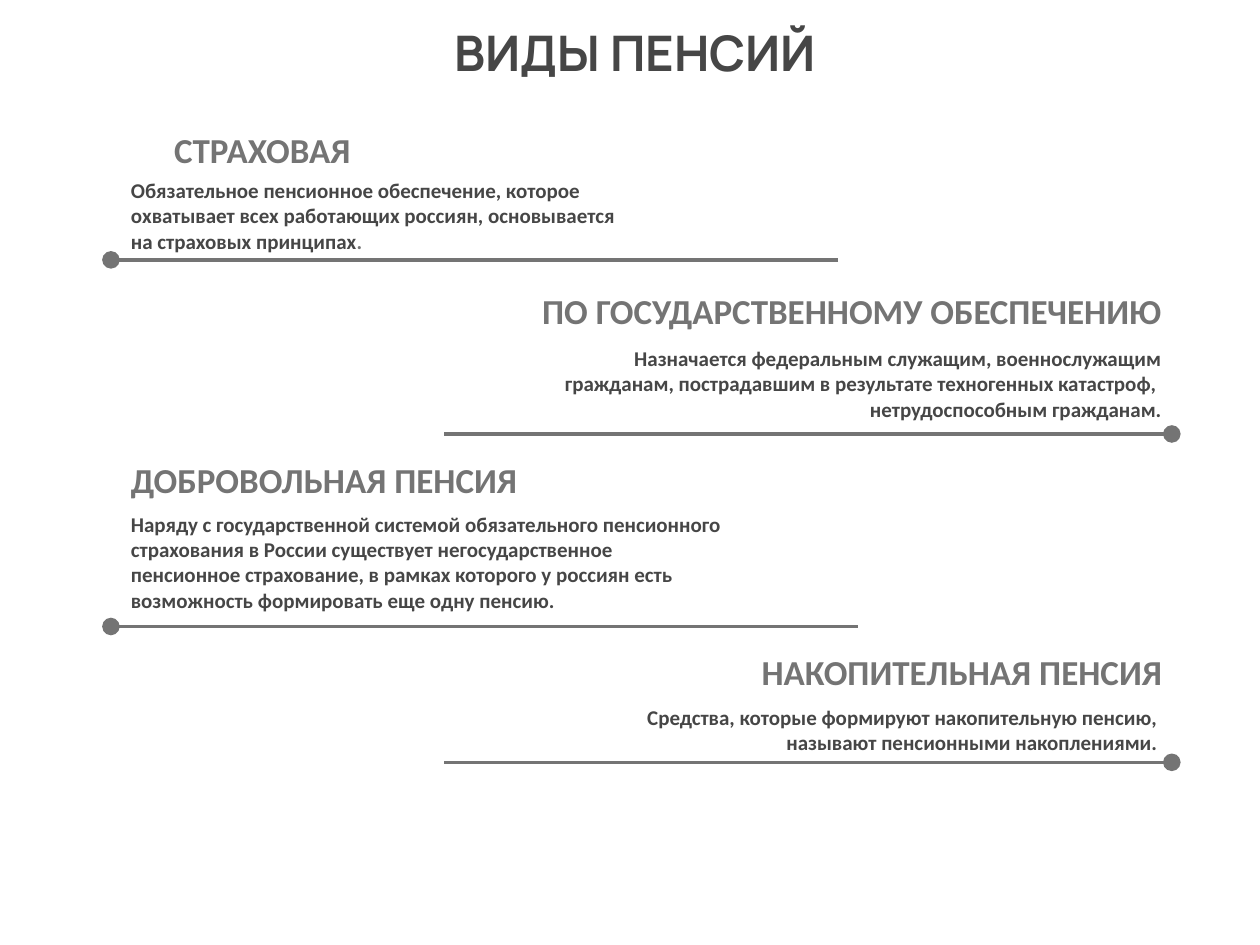
import pptx
import pptx.util
import pptx.dml.color
import pptx.enum.shapes
import pptx.enum.text
import pptx.oxml
import pptx.oxml.ns

Pt = pptx.util.Pt
Align = pptx.enum.text.PP_ALIGN
LEFT, RIGHT = Align.LEFT, Align.RIGHT

# Content: boxes are left, top, width, height; rules run from plain end to dot
TITLE = "ВИДЫ ПЕНСИЙ"
SECTIONS = [
    {"heading": "СТРАХОВАЯ", "heading_align": RIGHT, "align": LEFT,
     "heading_box": (25, 70, 182.4, 31.5), "body_box": (67.7, 98, 372, 51),
     "rule": (479, 63.4, 148.5),
     "body": [["Обязательное пенсионное обеспечение, которое"],
              ["охватывает всех работающих россиян, основывается"],
              ["на страховых принципах", "."]]},
    {"heading": "ПО ГОСУДАРСТВЕННОМУ ОБЕСПЕЧЕНИЮ", "heading_align": RIGHT, "align": RIGHT,
     "heading_box": (217.4, 162, 453.6, 31.5), "body_box": (255.6, 194, 415.4, 51),
     "rule": (254, 669.6, 248),
     "body": [["Назначается федеральным служащим, военнослужащим"],
              ["гражданам, пострадавшим в результате техногенных катастроф, "],
              ["нетрудоспособным гражданам."]]},
    {"heading": "ДОБРОВОЛЬНАЯ ПЕНСИЯ", "heading_align": LEFT, "align": LEFT,
     "heading_box": (67.7, 258.5, 385, 31.5), "body_box": (67.7, 288.7, 389, 65.4),
     "rule": (490.3, 63.4, 358),
     "body": [["Наряду с государственной системой обязательного пенсионного "
               "страхования в России существует негосударственное"],
              ["пенсионное страхование, в рамках которого у россиян есть"],
              ["возможность формировать еще одну пенсию."]]},
    {"heading": "НАКОПИТЕЛЬНАЯ ПЕНСИЯ", "heading_align": RIGHT, "align": RIGHT,
     "heading_box": (286.3, 368, 385, 31.5), "body_box": (286.3, 399, 385, 36.4),
     "rule": (254, 669.6, 435.6),
     "body": [["Средства, которые формируют накопительную пенсию, "],
              ["называют пенсионными накоплениями. "]]},
]

# Theme
DARK = pptx.dml.color.RGBColor.from_string("464646")
GREY = pptx.dml.color.RGBColor.from_string("747474")
THEME = {
    "title": {"name": "Manrope", "size": Pt(28), "bold": True, "color": DARK},
    "heading": {"name": "Calibri", "size": Pt(20), "bold": True, "color": GREY},
    "body": {"name": "Calibri", "size": Pt(12), "bold": True, "color": DARK},
    "rule": {"color": GREY, "width": Pt(2)},
}


def style(font, formats):
    for name, value in formats.items():
        if name == "color":
            font.color.rgb = value
        else:
            setattr(font, name, value)


def write(frame, paragraphs, kind, align):
    frame.word_wrap = True
    for index, spans in enumerate(paragraphs):
        para = frame.paragraphs[0] if index == 0 else frame.add_paragraph()
        para.alignment = align
        for text in spans:
            span = para.add_run()
            span.text = text
            style(span.font, THEME[kind])
            if text == ".":
                span.font.color.rgb = GREY


def add_text(page, place, paragraphs, kind, align):
    box = page.shapes.add_textbox(*map(Pt, place))
    write(box.text_frame, paragraphs, kind, align)
    box.text_frame.auto_size = pptx.enum.text.MSO_AUTO_SIZE.SHAPE_TO_FIT_TEXT


def add_rule(page, start, end, y):
    rule = page.shapes.add_connector(
        pptx.enum.shapes.MSO_CONNECTOR.STRAIGHT, Pt(start), Pt(y), Pt(end), Pt(y))
    rule.line.color.rgb = THEME["rule"]["color"]
    rule.line.width = THEME["rule"]["width"]
    # Round dot at the far end, no shadow
    namespace = pptx.oxml.ns.nsdecls("a")
    rule.line._get_or_add_ln().append(pptx.oxml.parse_xml(
        f'<a:tailEnd {namespace} type="oval" w="lg" len="lg"/>'))
    rule._element.spPr.append(pptx.oxml.parse_xml(f"<a:effectLst {namespace}/>"))


def main():
    deck = pptx.Presentation()
    deck.slide_width, deck.slide_height = Pt(720), Pt(540)
    page = deck.slides.add_slide(deck.slide_layouts[5])

    # Title
    title = page.shapes.title
    title.left, title.top, title.width, title.height = map(Pt, (6, 13, 720 - 6, 60))
    title.text_frame.vertical_anchor = pptx.enum.text.MSO_ANCHOR.TOP
    write(title.text_frame, [[TITLE]], "title", Align.CENTER)
    title.text_frame.paragraphs[0].line_spacing = 0.9

    # Pension kinds
    for section in SECTIONS:
        add_rule(page, *section["rule"])
        add_text(page, section["body_box"], section["body"], "body", section["align"])
        add_text(page, section["heading_box"], [[section["heading"]]],
                 "heading", section["heading_align"])

    deck.save("out.pptx")


if __name__ == "__main__":
    main()
